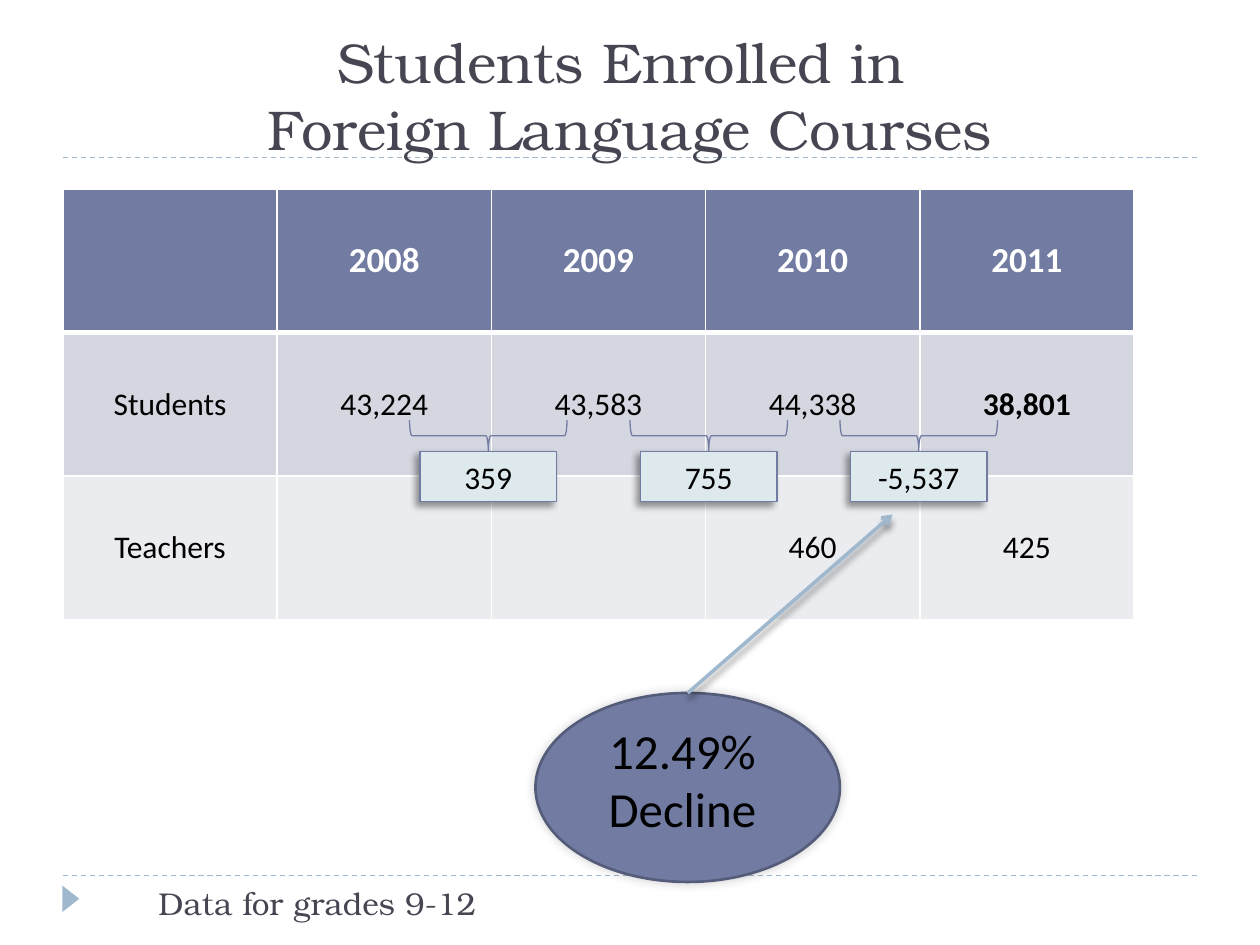
from dataclasses import dataclass

from lxml.etree import SubElement
from pptx import Presentation
from pptx.dml.color import RGBColor
from pptx.enum.dml import MSO_LINE_DASH_STYLE as DASH
from pptx.enum.shapes import MSO_CONNECTOR, MSO_SHAPE as SHAPE
from pptx.enum.text import MSO_ANCHOR as ANCHOR, PP_ALIGN as ALIGN
from pptx.oxml import parse_xml
from pptx.oxml.ns import nsdecls, qn
from pptx.util import Emu, Inches, Pt

SERIF, SANS = "TeX Gyre Bonum", "Calibri"
INK, BLACK, WHITE = "464653", "000000", "FFFFFF"
INDIGO, DEEP, SKY, PALE = "727CA3", "545C79", "9FB8CD", "DDE9EC"

COLS, ROWS = 120, 90  # slide grid of square cells, twelve to the inch

prs = Presentation()
prs.slide_width, prs.slide_height = Inches(10), Inches(7.5)
slide = prs.slides.add_slide(prs.slide_layouts[6])


@dataclass(frozen=True)
class Box:
    col: float
    row: float
    cols: float
    rows: float

    def emu(self) -> list[Emu]:
        return [gx(self.col), gy(self.row), gx(self.cols), gy(self.rows)]


@dataclass(frozen=True)
class Shadow:
    alpha: int
    blur: float
    dist: float
    angle: int


@dataclass(frozen=True)
class Change:
    """Difference between two neighbouring years."""
    text: str
    col: int


def gx(col: float) -> Emu:
    return Emu(round(prs.slide_width * col / COLS))


def gy(row: float) -> Emu:
    return Emu(round(prs.slide_height * row / ROWS))


def rgb(value: str) -> RGBColor:
    return RGBColor.from_string(value)


def set_shadow(sp, shadow: Shadow | None) -> None:
    """Replace the theme's shadow with the given one, or with none."""
    effects = SubElement(sp._element.spPr, qn("a:effectLst"))
    if shadow:
        outer = SubElement(effects, qn("a:outerShdw"), blurRad=str(Pt(shadow.blur)),
                           dist=str(Pt(shadow.dist)), dir=str(shadow.angle * 60000),
                           rotWithShape="0")
        color = SubElement(outer, qn("a:srgbClr"), val=BLACK)
        SubElement(color, qn("a:alpha"), val=str(shadow.alpha * 1000))


def write(tf, text: str, size: float, font: str = SANS, color: str = BLACK,
          align=ALIGN.CENTER, bold: bool = False) -> None:
    p = tf.paragraphs[0]
    p.text, p.alignment = text, align
    p.font.size, p.font.name, p.font.bold = Pt(size), font, bold
    p.font.color.rgb = rgb(color)


def add_text(box: Box, text: str, size: float, wrap: bool = True,
             anchor=ANCHOR.TOP, **style) -> None:
    tf = slide.shapes.add_textbox(*box.emu()).text_frame
    tf.word_wrap, tf.vertical_anchor = wrap, anchor
    write(tf, text, size, **style)


def add_shape(kind, box: Box, fill: str | None = None, line: str | None = None,
              width: float = 0.75, shadow: Shadow | None = None, rotation: int = 0):
    sp = slide.shapes.add_shape(kind, *box.emu())
    sp.rotation = rotation
    if fill:
        sp.fill.solid()
        sp.fill.fore_color.rgb = rgb(fill)
    else:
        sp.fill.background()
    if line:
        sp.line.color.rgb, sp.line.width = rgb(line), Pt(width)
    else:
        sp.line.fill.background()
    set_shadow(sp, shadow)
    return sp


def add_line(start: tuple[float, float], end: tuple[float, float],
             width: float = 0.75, shadow: Shadow | None = None):
    line = slide.shapes.add_connector(MSO_CONNECTOR.STRAIGHT, gx(start[0]), gy(start[1]),
                                      gx(end[0]), gy(end[1]))
    line.line.color.rgb, line.line.width = rgb(SKY), Pt(width)
    set_shadow(line, shadow)
    return line


def style_cell(cell, fill: str, bottom: float, top: float) -> None:
    tc_pr = cell._tc.get_or_add_tcPr()
    for side, width in (("L", 1), ("R", 1), ("T", top), ("B", bottom)):
        tc_pr.append(parse_xml(
            f'<a:ln{side} {nsdecls("a")} w="{Pt(width)}"><a:solidFill>'
            f'<a:srgbClr val="{WHITE}"/></a:solidFill></a:ln{side}>'))
    cell.fill.solid()
    cell.fill.fore_color.rgb = rgb(fill)
    cell.vertical_anchor = ANCHOR.MIDDLE


def add_enrolment_table(box: Box, data: list[list[str]], fills: list[str]) -> None:
    table = slide.shapes.add_table(len(data), len(data[0]), *box.emu()).table
    for r, (values, fill) in enumerate(zip(data, fills)):
        header = r == 0
        for c, value in enumerate(values):
            cell = table.cell(r, c)
            style_cell(cell, fill, bottom=3 if header else 1, top=3 if r == 1 else 1)
            write(cell.text_frame, value, 20 if header else 18,
                  color=WHITE if header else BLACK, bold=header or value == "38,801")


# Rules, corner marker, title and footnote
for rule_row in (83.4, 15):
    add_line((6, rule_row), (114, rule_row)).line.dash_style = DASH.DASH
add_shape(SHAPE.ISOSCELES_TRIANGLE, Box(5.5, 84.8, 2.5, 1.6), SKY, rotation=90)
add_text(Box(6, 4, 108, 12), "Students Enrolled in \vForeign Language Courses", 32,
         anchor=ANCHOR.BOTTOM, font=SERIF, color=INK)
add_text(Box(13.9, 83.6, 33, 4.8), "Data for grades 9-12", 18, wrap=False,
         font=SERIF, color=INK, align=ALIGN.LEFT)

# Decline callout
add_shape(SHAPE.OVAL, Box(51, 66, 29, 18), INDIGO, DEEP, 1.5, Shadow(20, 6, 0, 225))
add_text(Box(53, 68, 24, 12.5), "12.49% Decline", 28)

# Enrolment table
add_enrolment_table(
    Box(6, 18, 102, 41),
    [["", "2008", "2009", "2010", "2011"],
     ["Students", "43,224", "43,583", "44,338", "38,801"],
     ["Teachers", "", "", "460", "425"]],
    [INDIGO, "D5D7E0", "EBECF0"])

# Arrow from the callout to the last change
arrow = add_line((65.5, 66), (85, 49), 2, Shadow(40, 4, 3.4, 90))
SubElement(arrow.line._get_or_add_ln(), qn("a:tailEnd"), type="arrow")

# Year-to-year changes, each under its brace
for change in (Change("359", 40), Change("755", 61), Change("-5,537", 81)):
    brace = add_shape(SHAPE.RIGHT_BRACE, Box(change.col + 5, 34, 3, 15),
                      line=INDIGO, rotation=90)
    brace.adjustments[0] = 0.08
    label = add_shape(SHAPE.RECTANGLE, Box(change.col, 43, 13, 4.8), PALE, INDIGO,
                      shadow=Shadow(40, 4, 3, 135))
    write(label.text_frame, change.text, 18)

prs.save("out.pptx")
